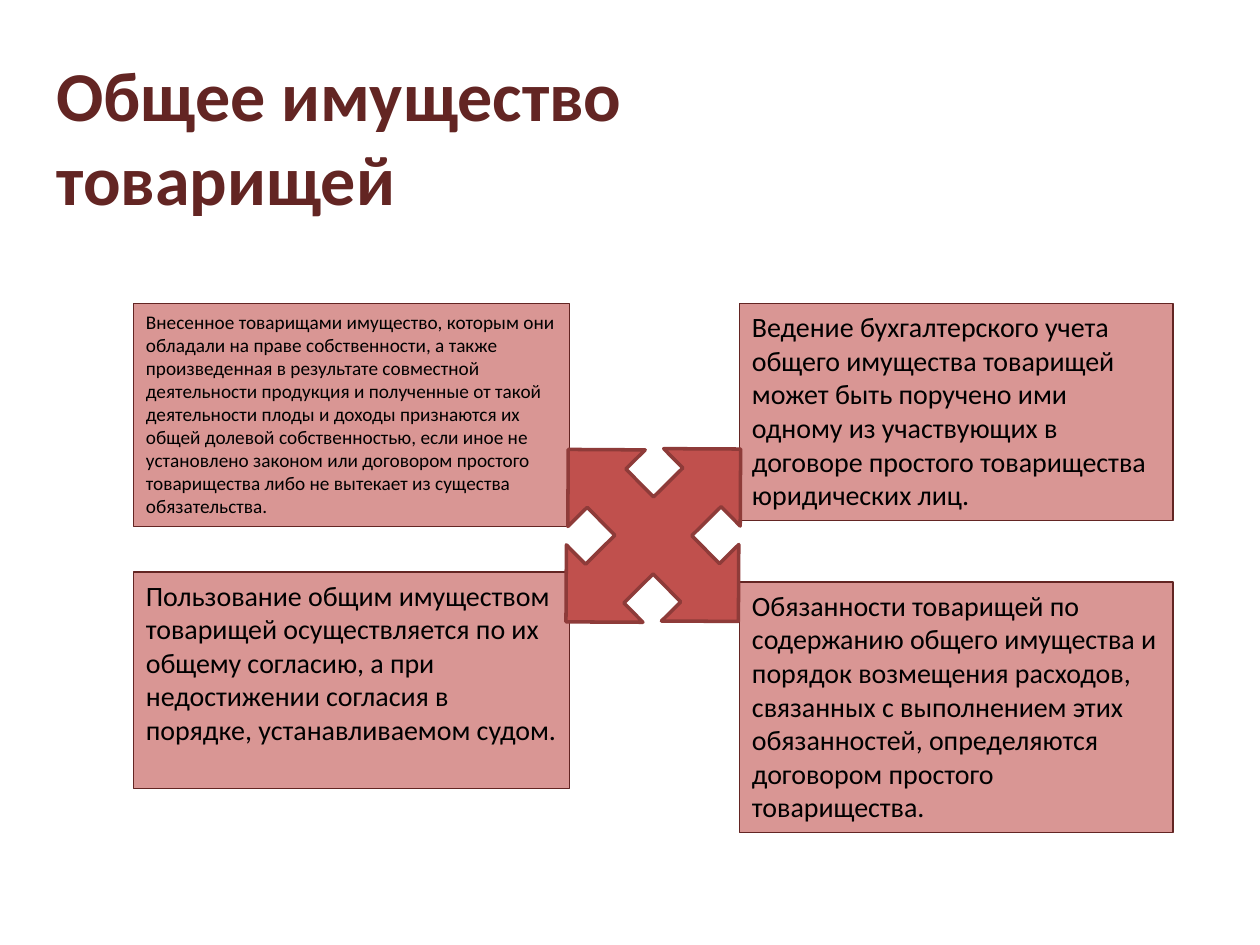
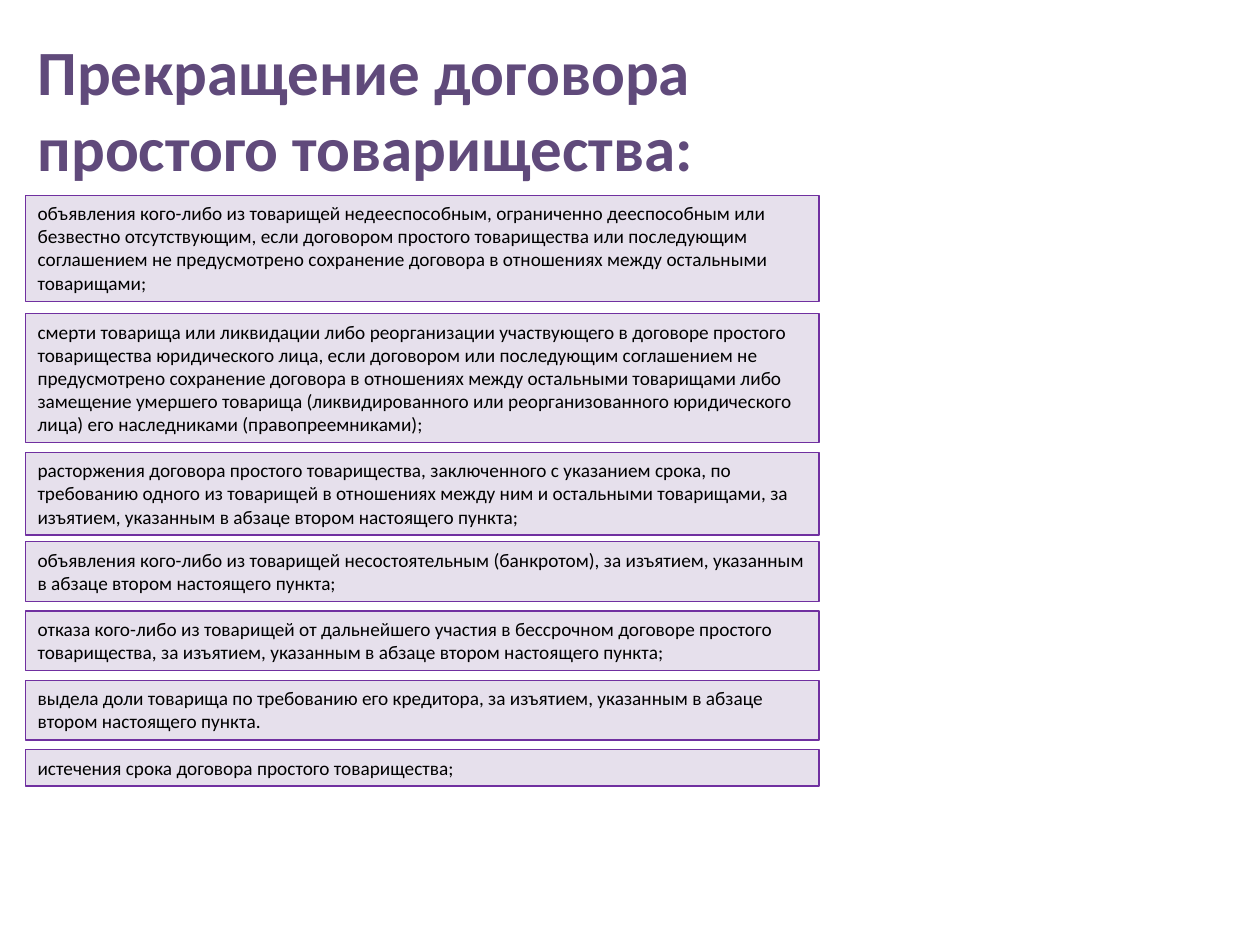
"""Build two slides on a simple partnership: common property and termination."""
from pptx import Presentation
from pptx.dml.color import RGBColor
from pptx.enum.shapes import MSO_SHAPE
from pptx.enum.text import MSO_ANCHOR, MSO_AUTO_SIZE, PP_ALIGN
from pptx.util import Inches, Pt

FONT = "Calibri"
BLACK = RGBColor(0x00, 0x00, 0x00)
MAROON = RGBColor(0x63, 0x25, 0x23)
ROSE = RGBColor(0xD9, 0x96, 0x94)
RED = RGBColor(0xC0, 0x50, 0x4D)
DARK_RED = RGBColor(0x8E, 0x3B, 0x39)
PLUM = RGBColor(0x60, 0x4A, 0x7B)
LILAC = RGBColor(0xE6, 0xE0, 0xEC)
VIOLET = RGBColor(0x70, 0x30, 0xA0)

COLUMNS, ROWS = 100, 75
BOX_PADDING, LINE_ROWS = 1.05, 1.84

PROPERTY_BOXES = [
    (10.6, 24.1, 34.6, 17.7, 11,
     "Внесенное товарищами имущество, которым они обладали на праве собственности, "
     "а также произведенная в результате совместной деятельности продукция и полученные "
     "от такой деятельности плоды и доходы признаются их общей долевой собственностью, "
     "если иное не установлено законом или договором простого товарищества либо "
     "не вытекает из существа обязательства."),
    (58.7, 24.1, 34.4, 17.2, 16,
     "Ведение бухгалтерского учета общего имущества товарищей может быть поручено ими "
     "одному из участвующих в договоре простого товарищества юридических лиц."),
    (10.6, 45.4, 34.6, 17.2, 16,
     "Пользование общим имуществом товарищей осуществляется по их общему согласию, "
     "а при недостижении согласия в порядке, устанавливаемом судом."),
    (58.7, 46.2, 34.4, 19.9, 16,
     "Обязанности товарищей по содержанию общего имущества и порядок возмещения расходов, "
     "связанных с выполнением этих обязанностей, определяются договором простого "
     "товарищества."),
]

TERMINATION_GROUNDS = [
    (15.5, 4,
     "объявления кого-либо из товарищей недееспособным, ограниченно дееспособным или "
     "безвестно отсутствующим, если договором простого товарищества или последующим "
     "соглашением не предусмотрено сохранение договора в отношениях между остальными "
     "товарищами;"),
    (24.9, 5,
     "смерти товарища или ликвидации либо реорганизации участвующего в договоре простого "
     "товарищества юридического лица, если договором или последующим соглашением "
     "не предусмотрено сохранение договора в отношениях между остальными товарищами либо "
     "замещение умершего товарища (ликвидированного или реорганизованного юридического "
     "лица) его наследниками (правопреемниками);"),
    (35.9, 3,
     "расторжения договора простого товарищества, заключенного с указанием срока, "
     "по требованию одного из товарищей в отношениях между ним и остальными товарищами, "
     "за изъятием, указанным в абзаце втором настоящего пункта;"),
    (43, 2,
     "объявления кого-либо из товарищей несостоятельным (банкротом), за изъятием, "
     "указанным в абзаце втором настоящего пункта;"),
    (48.5, 2,
     "отказа кого-либо из товарищей от дальнейшего участия в бессрочном договоре простого "
     "товарищества, за изъятием, указанным в абзаце втором настоящего пункта;"),
    (54, 2,
     "выдела доли товарища по требованию его кредитора, за изъятием, указанным в абзаце "
     "втором настоящего пункта."),
    (59.5, 1, "истечения срока договора простого товарищества;"),
]


class Deck:
    """Hold the presentation, its grid and the current slide."""

    def __init__(self):
        self.prs = Presentation()
        self.prs.slide_width, self.prs.slide_height = Inches(10), Inches(7.5)
        self.slide = None

    def new_slide(self):
        """Start a blank slide."""
        self.slide = self.prs.slides.add_slide(self.prs.slide_layouts[6])

    def area(self, col, row, cols, rows):
        """Turn grid units into lengths."""
        w, h = self.prs.slide_width / COLUMNS, self.prs.slide_height / ROWS
        return [round(n) for n in (col * w, row * h, cols * w, rows * h)]

    def set_text(self, sp, text, size, color, bold=False):
        """Fill a shape with one left-aligned paragraph."""
        tf = sp.text_frame
        tf.word_wrap = True
        tf.auto_size = MSO_AUTO_SIZE.SHAPE_TO_FIT_TEXT
        tf.vertical_anchor = MSO_ANCHOR.TOP
        p = tf.paragraphs[0]
        p.text = text
        p.alignment = PP_ALIGN.LEFT
        p.font.name, p.font.size, p.font.bold = FONT, Pt(size), bold
        p.font.color.rgb = color

    def title(self, area, text, size, color):
        """Add a bold slide title."""
        sp = self.slide.shapes.add_textbox(*self.area(*area))
        self.set_text(sp, text, size, color, bold=True)

    def shape(self, kind, area, fill, line, width):
        """Add a filled and outlined preset shape."""
        sp = self.slide.shapes.add_shape(kind, *self.area(*area))
        sp.shadow.inherit = False
        sp.fill.solid()
        sp.fill.fore_color.rgb = fill
        sp.line.color.rgb = line
        sp.line.width = Pt(width)
        return sp

    def box(self, area, text, size, fill, line):
        """Add a rectangle with text."""
        sp = self.shape(MSO_SHAPE.RECTANGLE, area, fill, line, 0.75)
        self.set_text(sp, text, size, BLACK)

    def cross_arrow(self, area, rotation):
        """Add a rotated four-way arrow."""
        sp = self.shape(MSO_SHAPE.QUAD_ARROW, area, RED, DARK_RED, 2)
        sp.rotation = rotation


def main():
    """Build both slides and save them."""
    deck = Deck()

    deck.new_slide()
    deck.title((3.5, 3.6, 50, 14.4), "Общее имущество товарищей", 40, MAROON)
    for *area, size, text in PROPERTY_BOXES:
        deck.box(area, text, size, ROSE, MAROON)
    deck.cross_arrow((42.1, 32.9, 19.5, 19.2), 135.3)

    deck.new_slide()
    deck.title((2, 2.1, 68.5, 13.1), "Прекращение договора простого товарищества:", 36, PLUM)
    for row, lines, text in TERMINATION_GROUNDS:
        deck.box((2, row, 63, BOX_PADDING + LINE_ROWS * lines), text, 11, LILAC, VIOLET)

    deck.prs.save("out.pptx")


if __name__ == "__main__":
    main()
